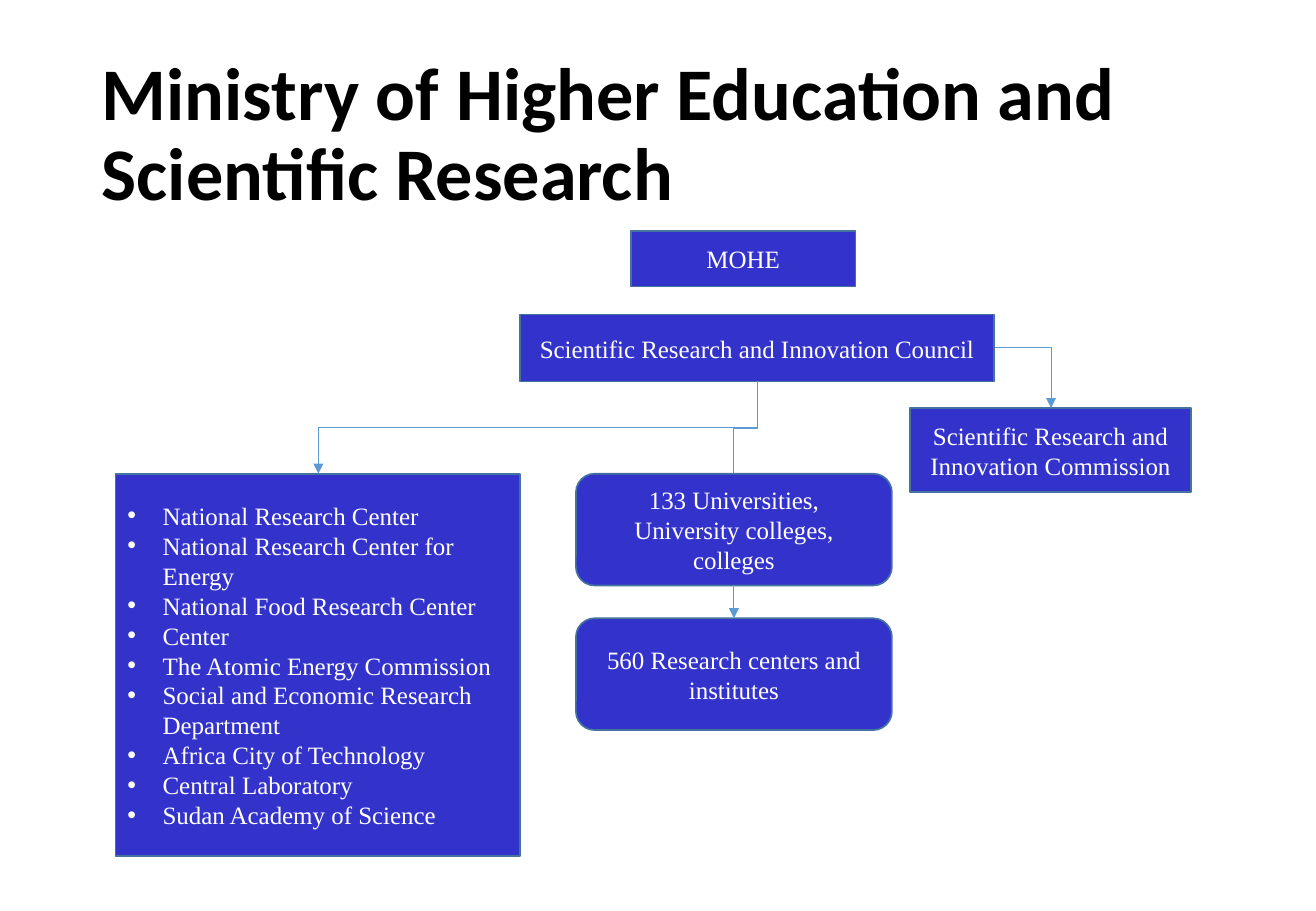
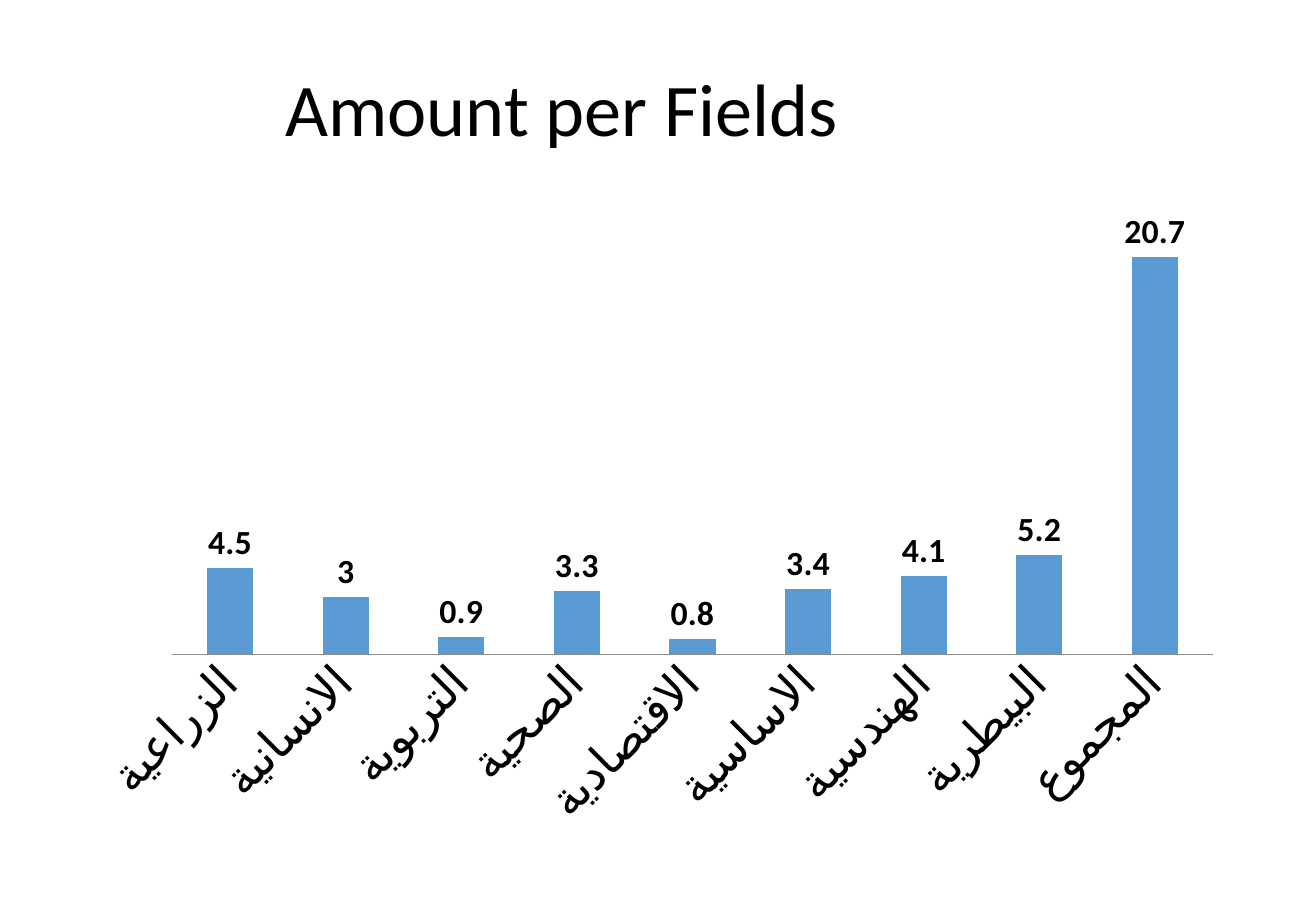
import pptx
import pptx.chart.data
import pptx.dml.color
import pptx.enum.chart
import pptx.enum.shapes
import pptx.enum.text
import pptx.oxml
import pptx.oxml.ns
import pptx.util
from dataclasses import dataclass

Inches = pptx.util.Inches
Pt = pptx.util.Pt
Kind = pptx.enum.shapes.MSO_SHAPE
Wire = pptx.enum.shapes.MSO_CONNECTOR
Align = pptx.enum.text.PP_ALIGN
qn = pptx.oxml.ns.qn


@dataclass(frozen=True)
class Theme:
    box: str = "3333CC"
    edge: str = "43739E"
    accent: str = "5B9BD5"
    axis: str = "8B8B8B"
    ink: str = "000000"
    white: str = "FFFFFF"
    sans: str = "Calibri"
    serif: str = "Times New Roman"
    title: float = 44
    body: float = 14.8
    chart: float = 12
    label: float = 20
    tick: float = 28


theme = Theme()

centers = [
    "National Research Center",
    "National Research Center for Energy",
    "National Food Research Center",
    "Center",
    "The Atomic Energy Commission",
    "Social and Economic Research Department",
    "Africa City of Technology",
    "Central Laboratory",
    "Sudan Academy of Science",
]
top = [
    (Kind.RECTANGLE, (5.19, 1.9, 1.85, 0.46), "MOHE"),
    (Kind.RECTANGLE, (7.49, 3.36, 2.31, 0.69), "Scientific Research and Innovation Commission"),
    (Kind.RECTANGLE, (0.95, 3.9, 3.33, 3.15), centers),
    (Kind.RECTANGLE, (4.28, 2.59, 3.9, 0.55), "Scientific Research and Innovation Council"),
]
units = [
    (Kind.ROUNDED_RECTANGLE, (4.74, 3.9, 2.6, 0.92), "133 Universities, University colleges, colleges"),
    (Kind.ROUNDED_RECTANGLE, (4.74, 5.09, 2.6, 0.92), "560 Research centers and institutes"),
]
drops = [((6.23, 3.14), (6.04, 4.06), 0.42), ((6.23, 3.14), (2.62, 3.9), 0.5)]
fields = [
    ("الزراعية", 4.5),
    ("الانسانية", 3),
    ("التربوية", 0.9),
    ("الصحية", 3.3),
    ("الاقتصادية", 0.8),
    ("الاساسية", 3.4),
    ("الهندسية", 4.1),
    ("البيطرية", 5.2),
    ("المجموع", 20.7),
]


def color(code):
    return pptx.dml.color.RGBColor.from_string(code)


def style(font, name, size, code, bold=False):
    font.name, font.size, font.bold = name, Pt(size), bold
    font.color.rgb = color(code)


def add_title(slide, text, place, bold=False):
    frame = slide.shapes.add_textbox(*map(Inches, place)).text_frame
    frame.word_wrap = True
    frame.vertical_anchor = pptx.enum.text.MSO_ANCHOR.MIDDLE
    para = frame.paragraphs[0]
    para.text = text
    para.line_spacing = 0.9
    style(para.font, theme.sans, theme.title, theme.ink, bold)


def add_bullet(para):
    props = para._p.get_or_add_pPr()
    props.set("marL", str(Inches(0.29)))
    props.set("indent", str(-Inches(0.29)))
    space = pptx.oxml.ns.nsdecls("a")
    for tag in ('buFont %s typeface="Arial"', 'buChar %s char="•"'):
        props.append(pptx.oxml.parse_xml("<a:" + tag % space + "/>"))


def add_box(slide, kind, place, text):
    box = slide.shapes.add_shape(kind, *map(Inches, place))
    box.shadow.inherit = False
    box.fill.solid()
    box.fill.fore_color.rgb = color(theme.box)
    box.line.color.rgb = color(theme.edge)
    box.line.width = Pt(1)
    listed = isinstance(text, list)
    frame = box.text_frame
    frame.vertical_anchor = pptx.enum.text.MSO_ANCHOR.MIDDLE
    frame.text = "\n".join(text) if listed else text
    for para in frame.paragraphs:
        para.alignment = Align.LEFT if listed else Align.CENTER
        style(para.font, theme.serif, theme.body, theme.white)
        if listed:
            add_bullet(para)
    return box


def add_wire(slide, kind, start, end):
    wire = slide.shapes.add_connector(kind, *map(Inches, start + end))
    wire.line.color.rgb = color(theme.accent)
    wire.line.width = Pt(0.5)
    line = wire.line._get_or_add_ln()
    line.append(line.makeelement(qn("a:tailEnd"), {"type": "triangle"}))
    props = wire._element.spPr
    props.append(props.makeelement(qn("a:effectLst"), {}))
    return wire


def add_drop(slide, start, end, bend):
    (x1, y1), (x2, y2) = start, end
    midx, midy = (x1 + x2) / 2, (y1 + y2) / 2
    halfw, halfh = (y2 - y1) / 2, (x1 - x2) / 2
    wire = add_wire(slide, Wire.ELBOW, (midx - halfw, midy - halfh), (midx + halfw, midy + halfh))
    props = wire._element.spPr
    props.find(qn("a:xfrm")).set("rot", str(90 * 60000))
    guides = props.find(qn("a:prstGeom")).get_or_add_avLst()
    guide = {"name": "adj1", "fmla": f"val {round(bend * 100000)}"}
    guides.append(guides.makeelement(qn("a:gd"), guide))


def build_chart(slide):
    data = pptx.chart.data.CategoryChartData()
    names, values = zip(*fields)
    data.categories = names
    data.add_series("Series 1", values)
    kind = pptx.enum.chart.XL_CHART_TYPE.COLUMN_CLUSTERED
    chart = slide.shapes.add_chart(kind, *map(Inches, (0.67, 1.33, 9.5, 5.58)), data).chart
    chart.has_legend = chart.has_title = False
    style(chart.font, theme.sans, theme.chart, theme.ink)
    chart.value_axis.visible = False
    chart.value_axis.has_major_gridlines = False
    axis = chart.category_axis
    axis.major_tick_mark = pptx.enum.chart.XL_TICK_MARK.NONE
    axis.format.line.color.rgb = color(theme.axis)
    style(axis.tick_labels.font, theme.sans, theme.tick, theme.ink)
    axis._element.find(qn("c:txPr")).find(qn("a:bodyPr")).set("rot", str(-45 * 60000))
    plot = chart.plots[0]
    plot.gap_width = 150
    plot.vary_by_categories = False
    series = plot.series[0]
    series.format.fill.solid()
    series.format.fill.fore_color.rgb = color(theme.accent)
    labels = series.data_labels
    labels.show_value = True
    labels.position = pptx.enum.chart.XL_LABEL_POSITION.OUTSIDE_END
    style(labels.font, theme.sans, theme.label, theme.ink, True)


def main():
    deck = pptx.Presentation()
    deck.slide_width, deck.slide_height = Inches(10.83), Inches(7.5)
    org, funds = (deck.slides.add_slide(deck.slide_layouts[6]) for _ in range(2))

    add_title(org, "Ministry of Higher Education and Scientific Research", (0.74, 0.4, 9.34, 1.45), True)
    for item in top:
        add_box(org, *item)
    side = add_wire(org, Wire.ELBOW, (8.19, 2.86), (8.65, 3.36))
    side._element.spPr.find(qn("a:prstGeom")).set("prst", "bentConnector2")
    for drop in drops:
        add_drop(org, *drop)
    upper, lower = [add_box(org, *item) for item in units]
    link = add_wire(org, Wire.STRAIGHT, (6.04, 4.82), (6.04, 5.09))
    link.begin_connect(upper, 2)
    link.end_connect(lower, 0)

    add_title(funds, "Amount per Fields", (2.25, 0.3, 7.67, 1.25))
    build_chart(funds)
    deck.save("out.pptx")


if __name__ == "__main__":
    main()
